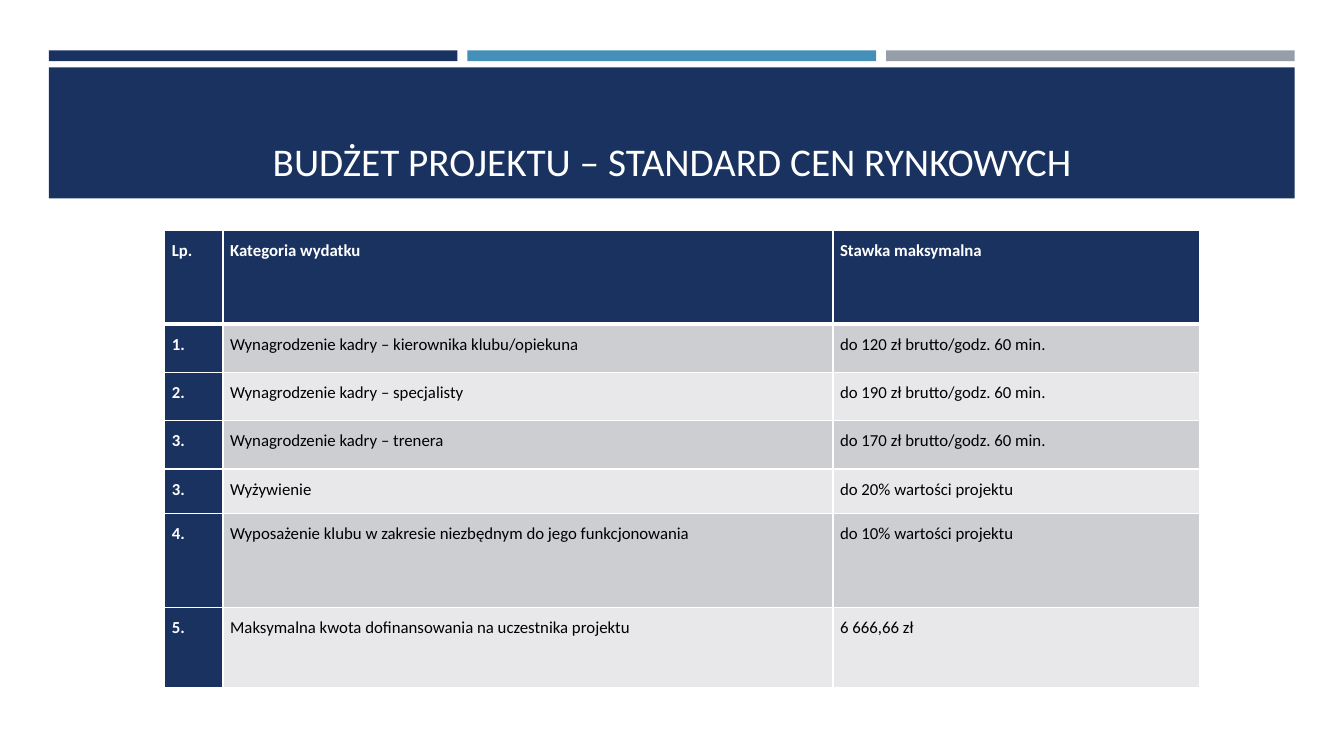
from lxml.etree import SubElement
from pptx import Presentation
from pptx.dml.color import RGBColor
from pptx.enum.shapes import MSO_SHAPE
from pptx.enum.text import MSO_ANCHOR, PP_ALIGN
from pptx.oxml.ns import qn
from pptx.util import Cm, Pt

COLORS = {
    "navy": "1A3260", "blue": "4590B8", "gray": "969FA7",
    "dark_band": "CDCED2", "light_band": "E8E8EA",
    "white": "FFFFFF", "black": "000000",
}
FONT = "Calibri"
COL_WIDTHS = [1.47, 15.37, 9.25]
ROW_HEIGHTS = [2.36, 1.22, 1.22, 1.22, 1.12, 2.36, 2.03]
ROWS = [
    ("Lp.", "Kategoria wydatku", "Stawka maksymalna"),
    ("1.", "Wynagrodzenie kadry – kierownika klubu/opiekuna", "do 120 zł brutto/godz. 60 min."),
    ("2.", "Wynagrodzenie kadry – specjalisty", "do 190 zł brutto/godz. 60 min."),
    ("3.", "Wynagrodzenie kadry – trenera", "do 170 zł brutto/godz. 60 min."),
    ("3.", "Wyżywienie", "do 20% wartości projektu"),
    ("4.", "Wyposażenie klubu w zakresie niezbędnym do jego funkcjonowania",
     "do 10% wartości projektu"),
    ("5.", "Maksymalna kwota dofinansowania na uczestnika projektu", "6 666,66 zł"),
]


def rgb(name):
    return RGBColor.from_string(COLORS[name])


def set_font(p, size, color, bold=False):
    p.font.name, p.font.size, p.font.bold = FONT, Pt(size), bold
    p.font.color.rgb = rgb(color)


def add_rect(s, left, top, width, height, color):
    sp = s.shapes.add_shape(MSO_SHAPE.RECTANGLE, Cm(left), Cm(top), Cm(width), Cm(height))
    sp.fill.solid()
    sp.fill.fore_color.rgb = rgb(color)
    sp.line.fill.background()
    sp.shadow.inherit = False


def add_header(s, left, top, width, height, text):
    # Three accent bars
    gap, bar_height, band_top = 0.25, 0.27, 0.43
    bar_width = (width - 2 * gap) / 3
    for i, color in enumerate(("navy", "blue", "gray")):
        add_rect(s, left + i * (bar_width + gap), top, bar_width, bar_height, color)

    # Title band
    add_rect(s, left, top + band_top, width, height - band_top, "navy")

    # Title, brought in front of its band
    title = s.shapes.title
    title.left, title.top = Cm(left + 0.4), Cm(top + 0.69)
    title.width, title.height = Cm(width - 0.8), Cm(height - 0.91)
    s.shapes.element.append(title.element)
    tf = title.text_frame
    tf.text = text
    tf.word_wrap = True
    tf.vertical_anchor = MSO_ANCHOR.BOTTOM
    p = tf.paragraphs[0]
    p.alignment = PP_ALIGN.CENTER
    set_font(p, 28, "white")


def set_borders(cell, widths):
    # Borders come before the fill in the cell properties
    tc_pr = cell._tc.get_or_add_tcPr()
    for side, width in widths.items():
        ln = SubElement(tc_pr, qn(f"a:ln{side}"), w=str(Pt(width)))
        fill = SubElement(ln, qn("a:solidFill"))
        SubElement(fill, qn("a:srgbClr"), val=COLORS["white"])


def format_cell(cell, text, row, col):
    heading = row == 0 or col == 0
    set_borders(cell, {"L": 1, "R": 1, "T": 3 if row == 1 else 1, "B": 3 if row == 0 else 1})
    cell.fill.solid()
    band = "dark_band" if row % 2 else "light_band"
    cell.fill.fore_color.rgb = rgb("navy" if heading else band)
    cell.margin_left = cell.margin_right = Cm(0.18)
    cell.margin_top = cell.margin_bottom = 0
    cell.text = text
    p = cell.text_frame.paragraphs[0]
    p.line_spacing, p.space_after = 1.5, Pt(8)
    set_font(p, 12, "white" if heading else "black", heading)


def add_rate_table(s, left, top):
    table = s.shapes.add_table(
        len(ROWS), len(COL_WIDTHS), Cm(left), Cm(top),
        Cm(sum(COL_WIDTHS)), Cm(sum(ROW_HEIGHTS))).table
    table.first_col = True
    for column, width in zip(table.columns, COL_WIDTHS):
        column.width = Cm(width)
    for row, (texts, height) in enumerate(zip(ROWS, ROW_HEIGHTS)):
        table.rows[row].height = Cm(height)
        for col, text in enumerate(texts):
            format_cell(table.cell(row, col), text, row, col)


def main():
    prs = Presentation()
    prs.slide_width, prs.slide_height = Cm(33.87), Cm(19.05)
    s = prs.slides.add_slide(prs.slide_layouts[5])
    add_header(s, 1.23, 1.27, 31.4, 3.73, "BUDŻET PROJEKTU – STANDARD CEN RYNKOWYCH")
    add_rate_table(s, 4.15, 5.8)
    prs.save("out.pptx")


if __name__ == "__main__":
    main()
